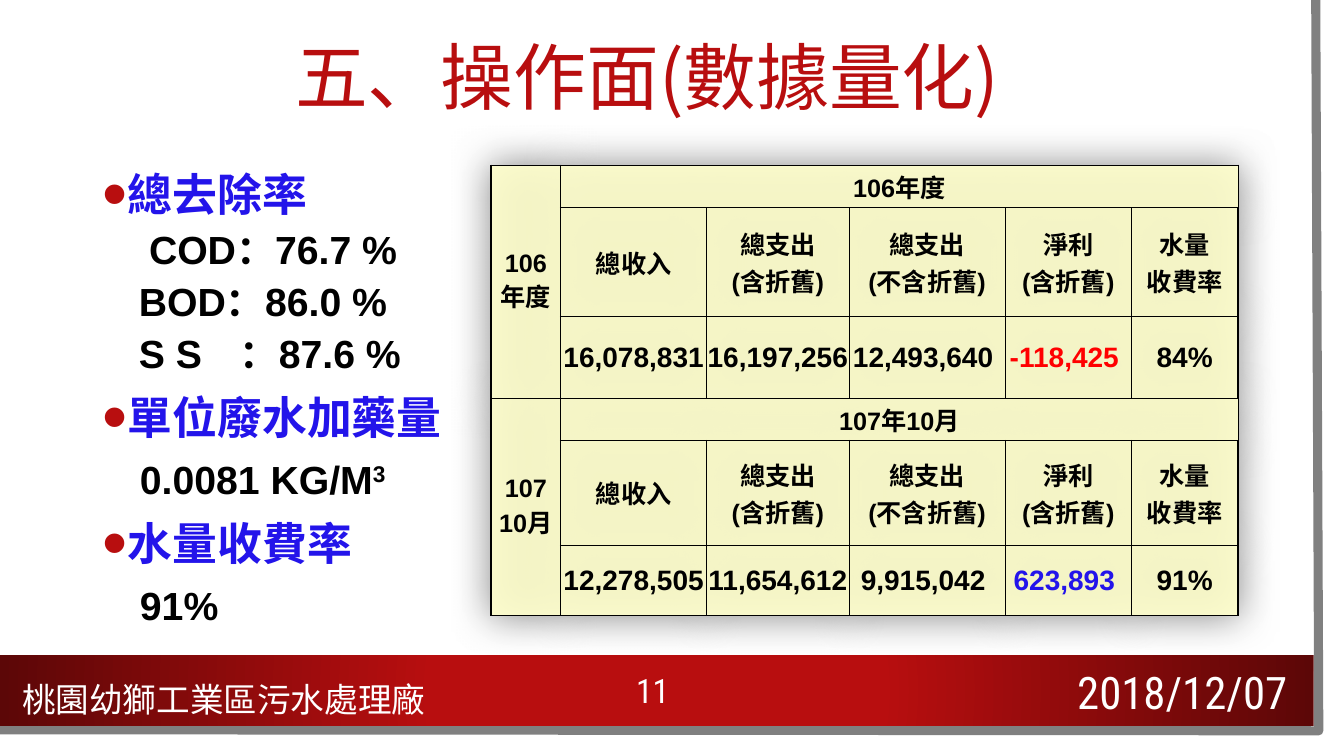
from lxml.etree import SubElement as Sub
from pptx import Presentation
from pptx.dml.color import RGBColor as RGB
from pptx.enum.shapes import MSO_SHAPE as Shape
from pptx.enum.text import MSO_ANCHOR as Anchor, PP_ALIGN as Align
from pptx.oxml import parse_xml
from pptx.oxml.ns import nsdecls, qn
from pptx.util import Inches, Pt

HUE = {"red": "B80E0F", "dark": "5C0707", "gray": "808080", "blue": "2314EA",
       "black": "000000", "white": "FFFFFF", "cream": "FFFFCC", "loss": "FF0000"}
SANS, NARROW, HAN = "Arial", "Roboto Condensed", "Noto Sans CJK TC"

HEADS = ["總收入", "總支出\n(含折舊)", "總支出\n(不含折舊)", "淨利\n(含折舊)", "水量\n收費率"]
YEARS = [
    ("106\n年度", "106年度", "loss",
     ["16,078,831 ", "16,197,256 ", "12,493,640 ", "-118,425 ", "84%"]),
    ("107\n10月", "107年10月", "blue",
     ["12,278,505 ", "11,654,612 ", "9,915,042 ", "623,893 ", "91%"]),
]
COLS = [0.69, 1.45, 1.41, 1.55, 1.25, 1.06]
ROWS = [0.42, 1.08, 0.81, 0.42, 1.04, 0.7]


def add_run(para, text, size, hue, face=SANS, bold=False):
    run = para.add_run()
    run.text = text
    font = run.font
    font.size, font.bold, font.name = Pt(size), bold, face
    font.color.rgb = RGB.from_string(HUE[hue])
    Sub(font._element, qn("a:ea")).set("typeface", HAN)
    return run


def add_box(slide, x, y, w, h, anchor=Anchor.MIDDLE):
    box = slide.shapes.add_textbox(Inches(x), Inches(y), Inches(w), Inches(h))
    frame = box.text_frame
    frame.word_wrap = True
    frame.vertical_anchor = anchor
    return frame


def add_label(slide, place, text, size, align=Align.LEFT, anchor=Anchor.MIDDLE):
    para = add_box(slide, *place, anchor).paragraphs[0]
    para.alignment = align
    add_run(para, text, size, "white", NARROW)


def add_frame(slide):
    # Gray edge on the right and bottom
    form = slide.shapes.build_freeform(Inches(13.05), 0)
    form.add_line_segments([(Inches(13.08), Inches(7.25)),
                            (Inches(-0.03), Inches(7.24))], close=False)
    edge = form.convert_to_shape()
    edge.shadow.inherit = False
    edge.fill.background()
    edge.line.color.rgb = RGB.from_string(HUE["gray"])
    edge.line.width = Pt(6.5)

    # Red footer band
    band = slide.shapes.add_shape(Shape.RECTANGLE, 0, Inches(6.5), Inches(13.03), Inches(0.7))
    band.shadow.inherit = False
    band.line.fill.background()
    band.fill.background()
    props = band._element.spPr
    props.replace(props.find(qn("a:noFill")), parse_xml(
        f'<a:gradFill {nsdecls("a")}><a:gsLst>'
        f'<a:gs pos="34000"><a:srgbClr val="{HUE["red"]}"/></a:gs>'
        f'<a:gs pos="100000"><a:srgbClr val="{HUE["dark"]}"/></a:gs></a:gsLst>'
        '<a:path path="circle"><a:fillToRect l="50000" t="50000" r="50000" b="50000"/>'
        '</a:path></a:gradFill>'))


def add_line(frame, first, pitch, gap, left, hang=0):
    para = frame.paragraphs[0] if first else frame.add_paragraph()
    para.line_spacing = Pt(pitch)
    para.space_before = Pt(gap)
    props = para._p.get_or_add_pPr()
    props.set("marL", str(Inches(left)))
    props.set("indent", str(Inches(-hang)))
    return para, props


def add_head(frame, text, pitch=38, first=False):
    para, props = add_line(frame, first, pitch, 0 if first else 10, 0.25, 0.25)
    Sub(Sub(props, qn("a:buClr")), qn("a:srgbClr")).set("val", HUE["red"])
    Sub(props, qn("a:buSzPct")).set("val", "160000")
    Sub(props, qn("a:buFont")).set("typeface", SANS)
    Sub(props, qn("a:buChar")).set("char", "•")
    add_run(para, text, 32, "blue", bold=True)


def add_fact(frame, text, pitch, gap, left, tab=None):
    para, props = add_line(frame, False, pitch, gap, left)
    if tab:
        stop = Sub(Sub(props, qn("a:tabLst")), qn("a:tab"))
        stop.set("pos", str(Inches(tab)))
        stop.set("algn", "l")
    add_run(para, text, 28, "black", bold=True)
    return para


def add_rates(slide):
    frame = add_box(slide, 0.92, 1.61, 4.77, 4.69)
    add_head(frame, "總去除率", 37, True)
    add_fact(frame, "COD：76.7 %", 37, 0, 0.46)
    add_fact(frame, "BOD：86.0 %", 37, 0, 0.36)
    add_fact(frame, "S S\t：87.6 %", 37, 0, 0.36, 1.39)
    add_head(frame, "單位廢水加藥量")
    dose = add_fact(frame, "0.0081 KG/M", 32, 10, 0.37)
    power = add_run(dose, "3", 28, "black", bold=True)
    power.font._element.set("baseline", "30000")
    add_head(frame, "水量收費率")
    add_fact(frame, "91%", 32, 10, 0.37)


def style_cell(cell, row, col):
    cell.margin_left = cell.margin_right = cell.margin_top = cell.margin_bottom = 0
    cell.vertical_anchor = Anchor.MIDDLE
    props = cell._tc.get_or_add_tcPr()
    # Heavy lines mark the year column, the year bands and the outer edge
    step = row % 3
    heavy = {"L": col < 2, "R": col in (0, 5), "T": step < 2 or col == 0,
             "B": step == 0 or row == 2 or col == 0}
    for side, thick in heavy.items():
        line = Sub(props, qn(f"a:ln{side}"))
        line.set("w", str(Pt(1 if thick else 0.5)))
        Sub(Sub(line, qn("a:solidFill")), qn("a:srgbClr")).set("val", HUE["black"])
    cell.fill.solid()
    cell.fill.fore_color.rgb = RGB.from_string(HUE["cream"])
    tint = props.find(qn("a:solidFill")).find(qn("a:srgbClr"))
    Sub(tint, qn("a:alpha")).set("val", "91000")


def fill_cell(cell, text, size=18, hue="black"):
    para = cell.text_frame.paragraphs[0]
    para.alignment = Align.CENTER
    for num, part in enumerate(text.split("\n")):
        if num:
            para.add_line_break()
        add_run(para, part, size, hue, bold=True)


def add_sums(slide):
    grid = slide.shapes.add_table(len(ROWS), len(COLS), Inches(4.87), Inches(1.64),
                                  Inches(sum(COLS)), Inches(sum(ROWS))).table
    grid.first_row = grid.horz_banding = False
    for col, width in zip(grid.columns, COLS):
        col.width = Inches(width)
    for row, height in zip(grid.rows, ROWS):
        row.height = Inches(height)
    for row in range(len(ROWS)):
        for col in range(len(COLS)):
            style_cell(grid.cell(row, col), row, col)

    # Soft shadow around the table
    grid._tbl.tblPr.insert(0, parse_xml(
        f'<a:effectLst {nsdecls("a")}><a:outerShdw blurRad="{Inches(0.4)}" dist="0" '
        f'algn="ctr" rotWithShape="0"><a:srgbClr val="{HUE["black"]}">'
        '<a:alpha val="50000"/></a:srgbClr></a:outerShdw></a:effectLst>'))

    # One block of three rows for each year
    for num, (side, title, tone, sums) in enumerate(YEARS):
        top = num * 3
        grid.cell(top, 0).merge(grid.cell(top + 2, 0))
        grid.cell(top, 1).merge(grid.cell(top, 5))
        fill_cell(grid.cell(top, 0), side)
        fill_cell(grid.cell(top, 1), title)
        for col, (head, value) in enumerate(zip(HEADS, sums), 1):
            fill_cell(grid.cell(top + 1, col), head)
            fill_cell(grid.cell(top + 2, col), value, 20, tone if col == 4 else "black")


def main():
    deck = Presentation()
    deck.slide_width, deck.slide_height = Inches(13.33), Inches(7.5)
    slide = deck.slides.add_slide(deck.slide_layouts[6])
    add_frame(slide)

    # Title
    title = add_box(slide, 2.83, 0.35, 7.36, 0.91).paragraphs[0]
    title.line_spacing = 0.9
    add_run(title, "五", 52, "red")
    add_run(title, "、操作面(數據量化)", 52, "red", HAN)

    add_rates(slide)
    add_sums(slide)

    # Footer
    add_label(slide, (8.73, 6.59, 4.14, 0.55), "2018/12/07", 32, Align.RIGHT)
    add_label(slide, (0.12, 6.71, 4.21, 0.45), "桃園幼獅工業區污水處理廠", 24)
    add_label(slide, (6.21, 6.6, 0.99, 0.55), "11", 24, anchor=Anchor.TOP)
    deck.save("out.pptx")


if __name__ == "__main__":
    main()
